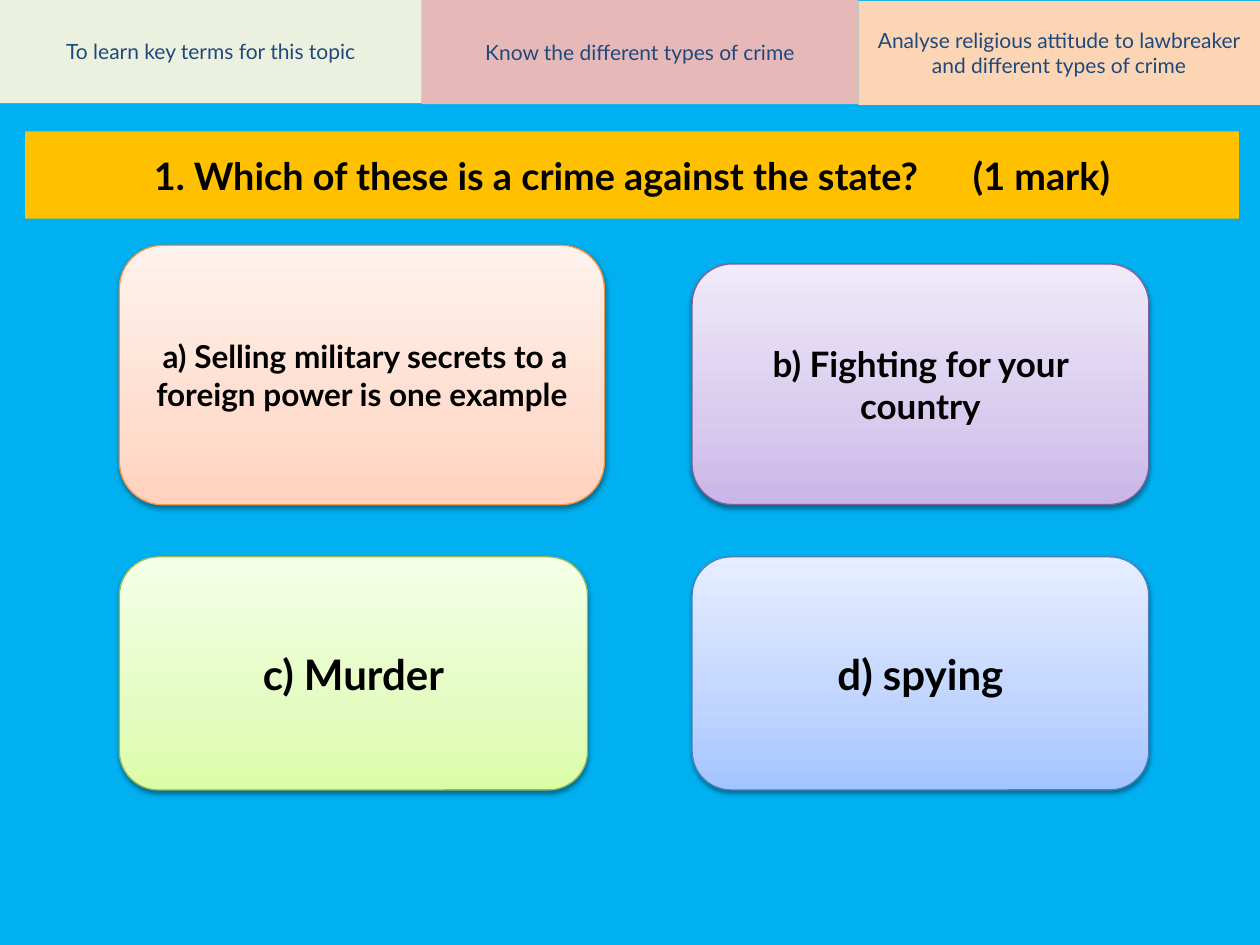
from copy import deepcopy

from lxml.etree import SubElement
from pptx import Presentation
from pptx.dml.color import RGBColor
from pptx.enum.shapes import MSO_SHAPE
from pptx.enum.text import MSO_ANCHOR, MSO_AUTO_SIZE, PP_ALIGN
from pptx.oxml.ns import qn
from pptx.util import Pt

theme = {
    "font": "Lato", "back": "00B0F0", "bar": "FFC000", "ink": "000000", "navy": "1F497D",
    "title": 21.6, "goal": 12, "lead": 14,
    "green": "EBF1DE", "pink": "E6B9B8", "peach": "FCD5B5",
    # gradient from foot to top, then the outline
    "orange": (["FFD2BD", "FFDED0", "FFF2ED"], "F69240"),
    "violet": (["C9B5E8", "D8CBEE", "F0EAF9"], "7D60A0"),
    "lime": (["DAFDA7", "E4FCC2", "F5FFE7"], "98B955"),
    "blue": (["A4C4FF", "BFD4FF", "E6EEFF"], "4B7EBC"),
}
rgb = RGBColor.from_string


def place(shape, box):
    for name, size in zip(("left", "top", "width", "height"), box):
        setattr(shape, name, Pt(size))


def write(shape, *runs):
    frame = shape.text_frame
    form = {"word_wrap": True, "auto_size": MSO_AUTO_SIZE.NONE,
            "vertical_anchor": MSO_ANCHOR.MIDDLE}
    for name, value in form.items():
        setattr(frame, name, value)
    para = frame.paragraphs[0]
    para.alignment = PP_ALIGN.CENTER
    for text, size, color, bold in runs:
        run = para.add_run()
        run.text = text
        for name, value in {"name": theme["font"], "size": Pt(size), "bold": bold}.items():
            setattr(run.font, name, value)
        run.font.color.rgb = rgb(theme[color])


# Slide and background
deck = Presentation()
deck.slide_width, deck.slide_height = Pt(720), Pt(540)
slide = deck.slides.add_slide(deck.slide_layouts[5])
slide.background.fill.solid()
slide.background.fill.fore_color.rgb = rgb(theme["back"])

# Question bar
title = slide.shapes.title
place(title, (14.4, 75, 693.5, 50))
title.fill.solid()
title.fill.fore_color.rgb = rgb(theme["bar"])
write(title, ("1. Which of these is a crime against the state?\t(1 mark)",
              theme["title"], "ink", True))

# Learning goals along the top
goals = [
    ("Know the different types of crime", "pink", (241, 0, 249.5, 59.5)),
    ("Analyse religious attitude to lawbreaker and different types of crime", "peach",
     (490.5, 0.5, 229.5, 59.5)),
    ("To learn key terms for this topic", "green", (0, -0.5, 241, 59.5)),
]
for text, color, box in goals:
    goal = slide.shapes.add_shape(MSO_SHAPE.RECTANGLE, 0, 0, 0, 0)
    place(goal, box)
    goal.shadow.inherit = False
    goal.fill.solid()
    goal.fill.fore_color.rgb = rgb(theme[color])
    goal.line.fill.background()
    write(goal, (text, theme["goal"], "navy", False))

# Answer cards
left, right, low = 68.2, 395.5, 318.2
cards = [
    ("a) Selling military secrets to a foreign power is one example", 18, "orange",
     (left, 140.2, 277.2, 148.3)),
    ("d) spying", 24, "blue", (right, low, 261, 133.2)),
    ("c) Murder", 24, "lime", (left, low, 267.6, 133.2)),
    ("b) Fighting for your country", 20, "violet", (right, 150.8, 261, 137.5)),
]
for text, size, color, box in cards:
    card = slide.shapes.add_shape(MSO_SHAPE.ROUNDED_RECTANGLE, 0, 0, 0, 0)
    place(card, box)
    tints, edge = theme[color]
    card.line.color.rgb = rgb(edge)
    card.line.width = Pt(0.75)

    # Three-stop gradient, running upwards
    card.fill.gradient()
    card.fill.gradient_angle = 90
    first = card.fill._xPr.find(".//" + qn("a:gs"))
    first.addnext(deepcopy(first))
    for stop, spot, tint in zip(card.fill.gradient_stops, (0, 0.35, 1), tints):
        stop.position = spot
        stop.color.rgb = rgb(tint)

    # Soft shadow below
    card.shadow.inherit = False
    effect = card._element.spPr.find(qn("a:effectLst"))
    shade = SubElement(effect, qn("a:outerShdw"), blurRad=str(Pt(3.1)), dist=str(Pt(1.6)),
                       dir="5400000", rotWithShape="0")
    tone = SubElement(shade, qn("a:srgbClr"), val=theme["ink"])
    SubElement(tone, qn("a:alpha"), val="38000")

    lead = [(" ", theme["lead"], "navy", False)] if color == "orange" else []
    write(card, *lead, (text, size, "ink", True))

deck.save("out.pptx")
